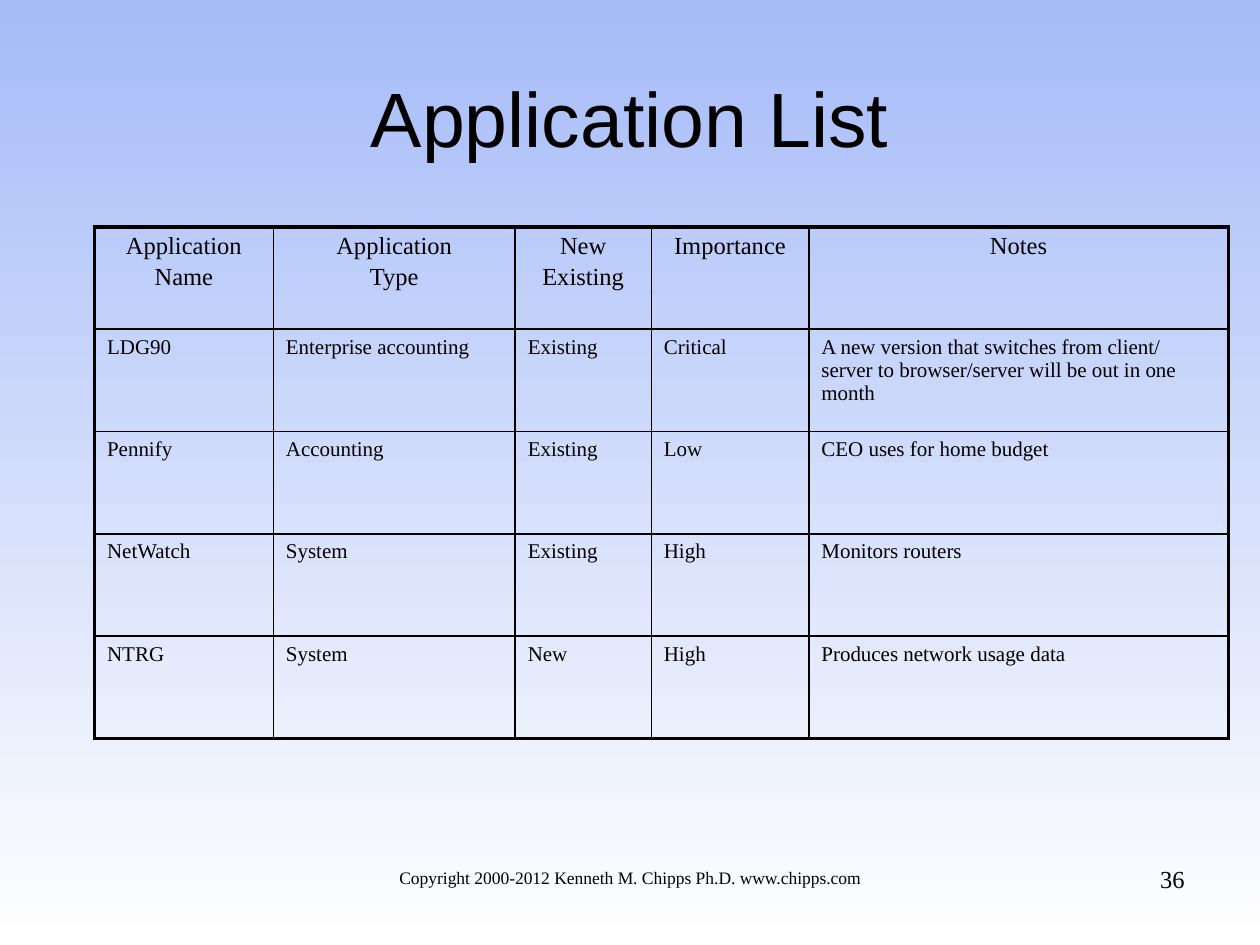
from pptx import Presentation
from pptx.dml.color import RGBColor
from pptx.enum.text import MSO_ANCHOR, PP_ALIGN
from pptx.oxml.ns import qn
from pptx.util import Pt
from lxml import etree

LEFT, CENTER, RIGHT = PP_ALIGN.LEFT, PP_ALIGN.CENTER, PP_ALIGN.RIGHT
TOP, MIDDLE = MSO_ANCHOR.TOP, MSO_ANCHOR.MIDDLE

TITLE = "Application List"
HEADERS = ["Application\nName", "Application\nType", "New\nExisting", "Importance", "Notes"]
ROWS = [
    ["LDG90", "Enterprise accounting", "Existing", "Critical",
     "A new version that switches from client/ server to browser/server will be out in one month"],
    ["Pennify", "Accounting", "Existing", "Low", "CEO uses for home budget"],
    ["NetWatch", "System", "Existing", "High", "Monitors routers"],
    ["NTRG", "System", "New", "High", "Produces network usage data"],
]
FOOTERS = [
    ("Copyright 2000-2012 Kenneth M. Chipps Ph.D. www.chipps.com", (216, 491.8, 288, 37.4), "footer", CENTER),
    ("36", (516.2, 490.3, 167.8, 37.4), "number", RIGHT),
]

THEME = {
    "ink": "000000",
    "background": ("A6BBF8", "FFFFFF"),
    "title": {"name": "Arial", "size": Pt(44)},
    "header": {"name": "Times New Roman", "size": Pt(14)},
    "body": {"name": "Times New Roman", "size": Pt(12)},
    "footer": {"name": "Times New Roman", "size": Pt(10)},
    "number": {"name": "Times New Roman", "size": Pt(14)},
    "outer": 2.25,
    "inner": 1,
    "line_gap": 2.2,
}
TITLE_BOX = (36, 21.6, 648, 90)
TABLE_LEFT, TABLE_TOP = 54, 129.6
COL_WIDTHS = [102.2, 138.2, 77.8, 90, 239.8]
ROW_HEIGHT = 58.5


def write(tf, text, style, align, anchor=TOP):
    tf.word_wrap = True
    tf.vertical_anchor = anchor
    for i, line in enumerate(text.split("\n")):
        p = tf.add_paragraph() if i else tf.paragraphs[0]
        p.alignment = align
        p.space_before = Pt(THEME["line_gap"] if i else 0)
        r = p.add_run()
        r.text = line
        for name, value in THEME[style].items():
            setattr(r.font, name, value)
        r.font.color.rgb = RGBColor.from_string(THEME["ink"])


def place(sp, box):
    for name, value in zip(("left", "top", "width", "height"), box):
        setattr(sp, name, Pt(value))


def set_borders(cell, edges):
    tcPr = cell._tc.get_or_add_tcPr()
    for side, is_outer in edges.items():
        width = THEME["outer" if is_outer else "inner"]
        ln = etree.SubElement(tcPr, qn("a:ln" + side), w=str(Pt(width)))
        fill = etree.SubElement(ln, qn("a:solidFill"))
        etree.SubElement(fill, qn("a:srgbClr"), val=THEME["ink"])


def add_table(s):
    grid = [HEADERS] + ROWS
    last_row, last_col = len(grid) - 1, len(HEADERS) - 1
    table = s.shapes.add_table(
        len(grid), len(HEADERS), Pt(TABLE_LEFT), Pt(TABLE_TOP),
        Pt(sum(COL_WIDTHS)), Pt(ROW_HEIGHT * len(grid))).table
    table.first_row = table.horz_banding = False
    for column, width in zip(table.columns, COL_WIDTHS):
        column.width = Pt(width)
    for i, texts in enumerate(grid):
        table.rows[i].height = Pt(ROW_HEIGHT)
        style, align = ("body", LEFT) if i else ("header", CENTER)
        for j, text in enumerate(texts):
            cell = table.cell(i, j)
            write(cell.text_frame, text, style, align)
            set_borders(cell, {"L": j == 0, "R": j == last_col, "T": i == 0, "B": i == last_row})
            cell.fill.background()


def main():
    prs = Presentation()
    prs.slide_width, prs.slide_height = Pt(720), Pt(540)
    s = prs.slides.add_slide(prs.slide_layouts[5])

    fill = s.background.fill
    fill.gradient()
    fill.gradient_angle = 270
    for stop, position, color in zip(fill.gradient_stops, (0, 1), THEME["background"]):
        stop.position = position
        stop.color.rgb = RGBColor.from_string(color)

    title = s.shapes.title
    place(title, TITLE_BOX)
    write(title.text_frame, TITLE, "title", CENTER, MIDDLE)
    add_table(s)
    for text, box, style, align in FOOTERS:
        sp = s.shapes.add_textbox(*map(Pt, box))
        write(sp.text_frame, text, style, align)
    prs.save("out.pptx")


if __name__ == "__main__":
    main()
